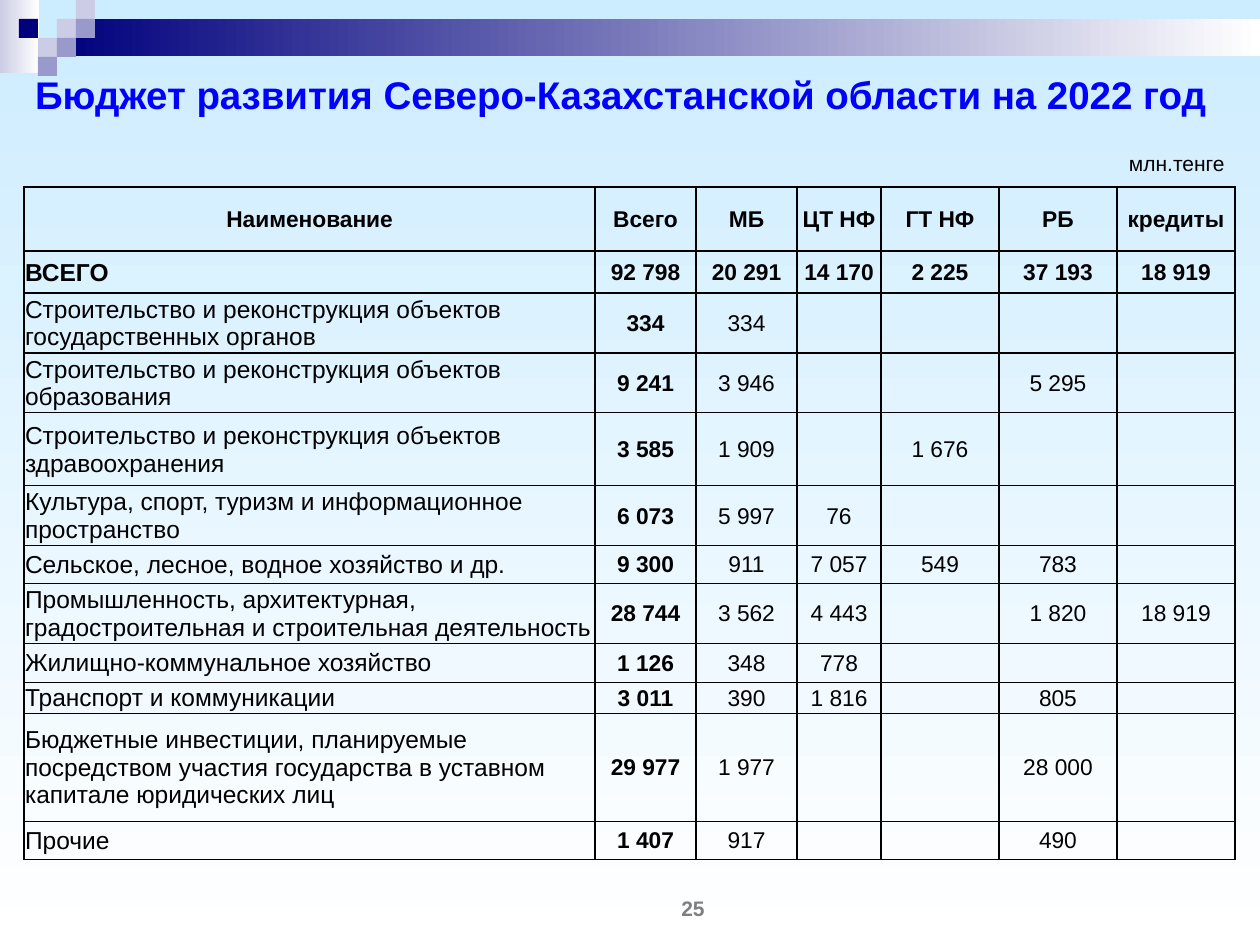
from lxml.etree import SubElement
from pptx import Presentation
from pptx.dml.color import RGBColor
from pptx.enum.shapes import MSO_SHAPE
from pptx.enum.text import MSO_ANCHOR, PP_ALIGN
from pptx.oxml.ns import qn
from pptx.util import Pt

SCALE = 914400 / 126
FONT = "Arial"
BLACK = RGBColor(0x00, 0x00, 0x00)
WHITE = RGBColor(0xFF, 0xFF, 0xFF)
BLUE = RGBColor(0x00, 0x00, 0xFF)
GREY = RGBColor(0x7F, 0x7F, 0x7F)
SKY = RGBColor(0xCC, 0xEC, 0xFF)
NAVY = RGBColor(0x00, 0x00, 0x7D)
LILAC = RGBColor(0xCC, 0xCC, 0xE6)
VIOLET = RGBColor(0x99, 0x99, 0xCC)

COLUMNS = [571, 101, 101, 84, 118, 118, 118]
ROW_HEIGHTS = [64, 42, 43, 43, 73, 40, 38, 55, 39, 31, 108, 38]
ROWS = [
    ("Наименование", "Всего", "МБ", "ЦТ НФ", "ГТ НФ", "РБ", "кредиты"),
    ("ВСЕГО", "92 798", "20 291", "14 170", "2 225", "37 193", "18 919"),
    ("Строительство и реконструкция объектов государственных органов",
     "334", "334", "", "", "", ""),
    ("Строительство и реконструкция объектов образования",
     "9 241", "3 946", "", "", "5 295", ""),
    ("Строительство и реконструкция объектов здравоохранения",
     "3 585", "1 909", "", "1 676", "", ""),
    ("Культура, спорт, туризм и информационное пространство",
     "6 073", "5 997", "76", "", "", ""),
    ("Сельское, лесное, водное хозяйство и др.",
     "9 300", "911", "7 057", "549", "783", ""),
    ("Промышленность, архитектурная, градостроительная и строительная деятельность",
     "28 744", "3 562", "4 443", "", "1 820", "18 919"),
    ("Жилищно-коммунальное хозяйство", "1 126", "348", "778", "", "", ""),
    ("Транспорт и коммуникации", "3 011", "390", "1 816", "", "805", ""),
    ("Бюджетные инвестиции, планируемые посредством участия государства "
     "в уставном капитале юридических лиц",
     "29 977", "1 977", "", "", "28 000", ""),
    ("Прочие", "1 407", "917", "", "", "490", ""),
]


def px(n):
    return round(n * SCALE)


def fill_gradient(fill, start, end, angle=0):
    fill.gradient()
    fill.gradient_angle = angle
    for stop, color, position in zip(fill.gradient_stops, (start, end), (0, 1)):
        stop.color.rgb = color
        stop.position = position


def format_text(p, size, color, bold, align):
    p.alignment = align
    for r in p.runs:
        r.font.name = FONT
        r.font.size = Pt(size)
        r.font.bold = bold
        r.font.color.rgb = color


def add_label(s, x, y, w, h, text, size, color, bold, align):
    tf = s.shapes.add_textbox(px(x), px(y), px(w), px(h)).text_frame
    tf.word_wrap = True
    tf.vertical_anchor = MSO_ANCHOR.MIDDLE
    tf.margin_top = tf.margin_bottom = 0
    tf.text = text
    format_text(tf.paragraphs[0], size, color, bold, align)


def add_block(s, x, y, w, h, color, end=None):
    """Borderless rectangle, fading to the end colour if one is given."""
    sp = s.shapes.add_shape(MSO_SHAPE.RECTANGLE, px(x), px(y), px(w), px(h))
    sp.shadow.inherit = False
    sp.line.fill.background()
    if end is None:
        sp.fill.solid()
        sp.fill.fore_color.rgb = color
    else:
        fill_gradient(sp.fill, color, end)


def add_header(s, x, y, w):
    """Fading bar with a mosaic of squares at its left end."""
    side = 19
    add_block(s, x, y, 39, 73, LILAC, WHITE)
    add_block(s, x + 57, y + side, w - 57, 37, NAVY, WHITE)
    mosaic = [(3, 1, LILAC), (4, 0, LILAC), (4, 1, VIOLET), (2, 2, LILAC),
              (1, 1, NAVY), (3, 2, VIOLET), (2, 3, VIOLET)]
    for col, row, color in mosaic:
        add_block(s, x + col * side, y + row * side, side, side, color)


def add_borders(cell):
    tcPr = cell._tc.get_or_add_tcPr()
    for side in ("a:lnL", "a:lnR", "a:lnT", "a:lnB"):
        ln = SubElement(tcPr, qn(side), w=str(Pt(1)))
        color = SubElement(ln, qn("a:solidFill"))
        SubElement(color, qn("a:srgbClr"), val=str(BLACK))


def fill_cell(cell, text, row, col):
    add_borders(cell)
    cell.fill.background()
    cell.vertical_anchor = MSO_ANCHOR.MIDDLE
    cell.margin_left = cell.margin_right = cell.margin_top = px(1)
    cell.margin_bottom = 0
    p = cell.text_frame.paragraphs[0]
    if not text:
        SubElement(p._p, qn("a:endParaRPr"), sz="1300")
        return
    p.text = text
    is_name = col == 0 and row > 0
    format_text(p, 14 if is_name else 13, BLACK, row < 2 or col == 1,
                PP_ALIGN.LEFT if is_name else PP_ALIGN.CENTER)


def add_budget_table(s, x, y):
    table = s.shapes.add_table(len(ROWS), len(COLUMNS), px(x), px(y),
                               px(sum(COLUMNS)), px(sum(ROW_HEIGHTS))).table
    table.first_row = table.horz_banding = False
    for column, width in zip(table.columns, COLUMNS):
        column.width = px(width)
    for i, (row, height) in enumerate(zip(table.rows, ROW_HEIGHTS)):
        row.height = px(height)
        for j, text in enumerate(ROWS[i]):
            fill_cell(table.cell(i, j), text, i, j)


def main():
    prs = Presentation()
    prs.slide_width, prs.slide_height = px(1260), px(945)
    s = prs.slides.add_slide(prs.slide_layouts[6])
    fill_gradient(s.background.fill, SKY, WHITE, 270)
    add_header(s, 0, 0, 1260)
    add_label(s, 5, 57, 1232, 74,
              "Бюджет развития Северо-Казахстанской области на 2022 год",
              22, BLUE, True, PP_ALIGN.CENTER)
    add_budget_table(s, 24, 187)
    add_label(s, 567, 893, 252, 30, "25", 12, GREY, True, PP_ALIGN.CENTER)
    add_label(s, 1063, 148, 174, 30, "млн.тенге", 12, BLACK, False, PP_ALIGN.RIGHT)
    prs.save("out.pptx")


if __name__ == "__main__":
    main()
